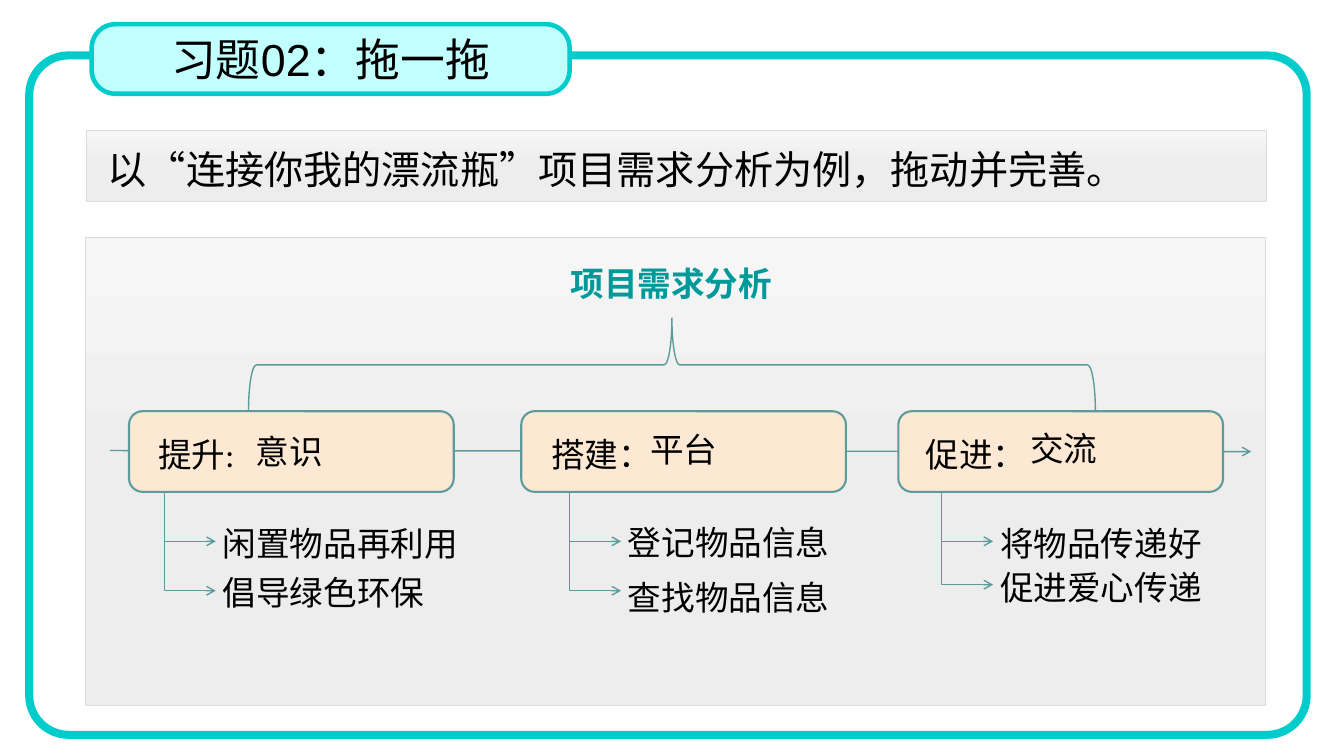
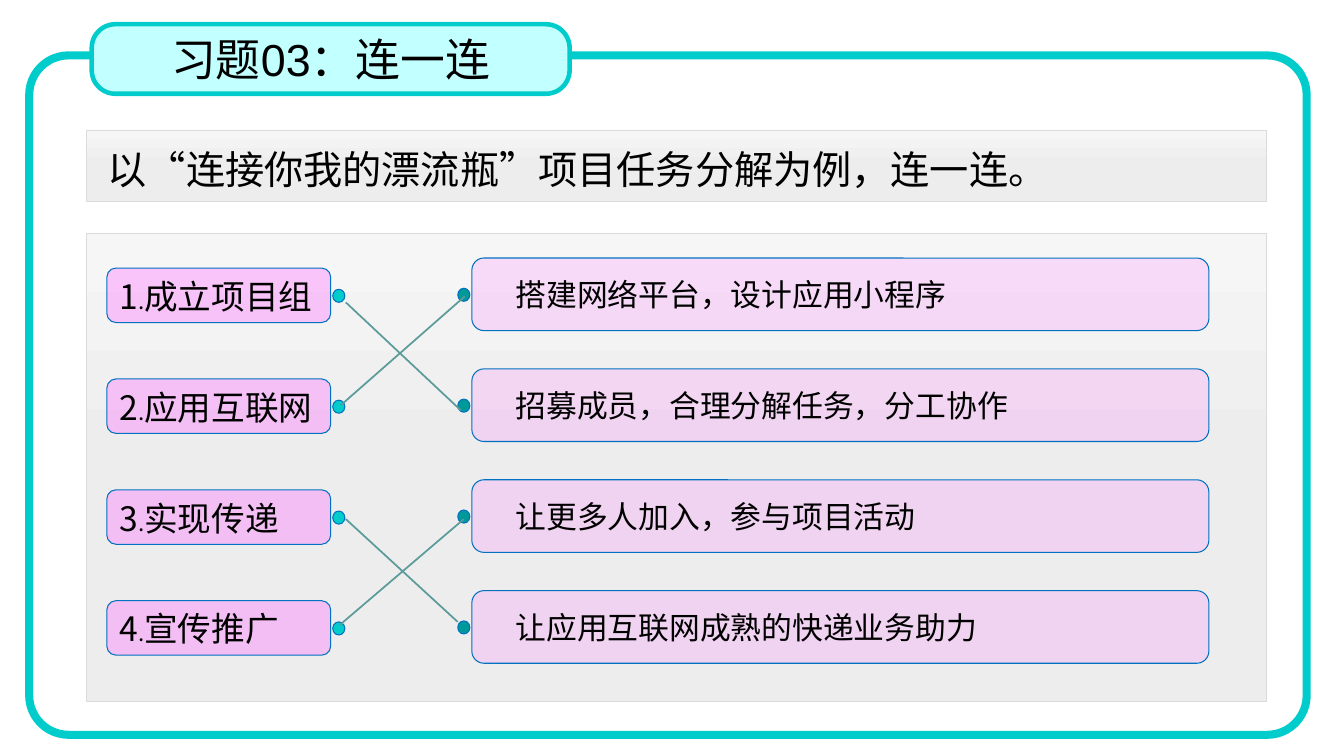
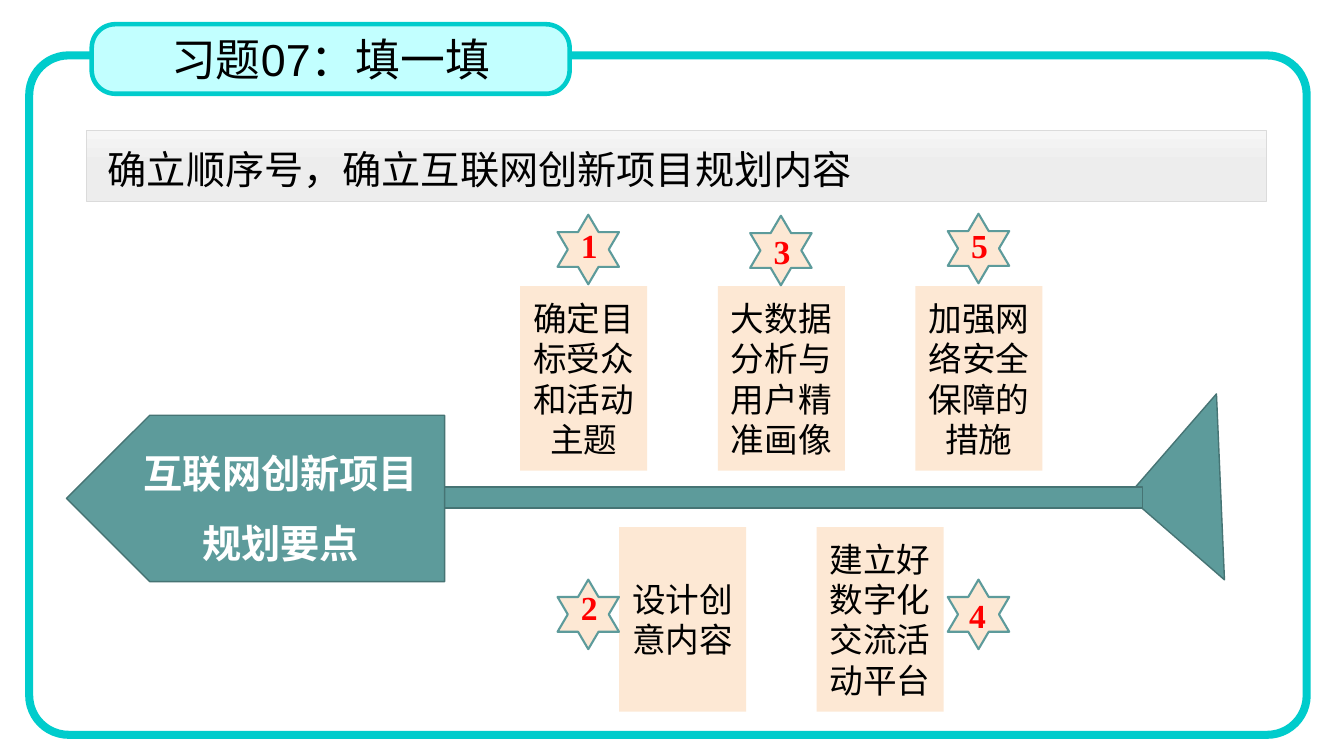
import copy

import pptx
import pptx.dml.color
import pptx.enum.shapes
import pptx.enum.text
import pptx.oxml
import pptx.oxml.ns
import pptx.util
from lxml import etree

Inches = pptx.util.Inches
Pt = pptx.util.Pt
RGBColor = pptx.dml.color.RGBColor
SHAPE = pptx.enum.shapes.MSO_SHAPE
LINK = pptx.enum.shapes.MSO_CONNECTOR
ALIGN = pptx.enum.text.PP_ALIGN
ANCHOR = pptx.enum.text.MSO_ANCHOR
qn = pptx.oxml.ns.qn

BLACK = RGBColor(0, 0, 0)
WHITE = RGBColor(0xFF, 0xFF, 0xFF)
RED = RGBColor(0xFF, 0, 0)
CYAN = RGBColor(0, 0xCC, 0xCC)
PALE_CYAN = RGBColor(0xC2, 0xFF, 0xFF)
TEAL = RGBColor(0x5D, 0x9B, 0x9B)
DARK_TEAL = RGBColor(0x46, 0x74, 0x74)
HEADING = RGBColor(0, 0x99, 0x99)
PEACH = RGBColor(0xFD, 0xE8, 0xD4)
PINK = RGBColor(0xFF, 0x66, 0xFF)
BLUE = RGBColor(0, 0x70, 0xC0)
PANEL_EDGE = RGBColor(0xDB, 0xDB, 0xDB)
PANEL_STOPS = [
    (0, RGBColor(0xF6, 0xF6, 0xF6)),
    (0.5, RGBColor(0xED, 0xED, 0xED)),
    (1, RGBColor(0xEB, 0xEB, 0xEB)),
]
CJK = "Noto Sans CJK SC"


def add_shape(slide, kind, box, fill=None, line=None, width=1, adj=(), alpha=None):
    sp = slide.shapes.add_shape(kind, *map(Inches, box))
    sp.shadow.inherit = False
    for i, value in enumerate(adj):
        sp.adjustments[i] = value
    if fill is None:
        sp.fill.background()
    else:
        sp.fill.solid()
        sp.fill.fore_color.rgb = fill
    if alpha is not None:
        color = sp._element.spPr.find(qn("a:solidFill"))[0]
        etree.SubElement(color, qn("a:alpha")).set("val", str(alpha * 1000))
    if line is None:
        sp.line.fill.background()
    else:
        sp.line.color.rgb = line
        sp.line.width = Pt(width)
    return sp


def add_run(p, text, size=24, font=CJK, color=BLACK, bold=False):
    r = p.add_run()
    r.text = text
    r.font.size = Pt(size)
    r.font.name = font
    r.font.bold = bold
    r.font.color.rgb = color
    ea = etree.Element(qn("a:ea"))
    ea.set("typeface", CJK)
    r.font._element.find(qn("a:latin")).addnext(ea)


def write(sp, text, align=ALIGN.LEFT, anchor=ANCHOR.MIDDLE, spacing=None, wrap=True, **font):
    tf = sp.text_frame
    tf.word_wrap = wrap
    tf.vertical_anchor = anchor
    for i, line in enumerate(text.split("\n")):
        p = tf.add_paragraph() if i else tf.paragraphs[0]
        p.alignment = align
        if spacing:
            p.line_spacing = spacing
        add_run(p, line, **font)


def add_text(slide, box, text, spacing=1.5, **fmt):
    sp = slide.shapes.add_textbox(*map(Inches, box))
    write(sp, text, anchor=ANCHOR.TOP, spacing=spacing, **fmt)


def add_line(slide, x1, y1, x2, y2, width=1, arrow=False, kind=LINK.STRAIGHT):
    cx = slide.shapes.add_connector(kind, *map(Inches, (x1, y1, x2, y2)))
    cx.line.color.rgb = TEAL
    cx.line.width = Pt(width)
    if arrow:
        tail = etree.SubElement(cx.line._get_or_add_ln(), qn("a:tailEnd"))
        tail.set("type", "arrow")
    etree.SubElement(cx._element.spPr, qn("a:effectLst"))
    return cx


def add_down_right_arrow(slide, x, y, across=0.51, down=0.49):
    mid_x, mid_y = x + across / 2, y + down / 2
    cx = add_line(slide, mid_x - down / 2, mid_y - across / 2,
                  mid_x + down / 2, mid_y + across / 2, arrow=True, kind=LINK.ELBOW)
    spPr = cx._element.spPr
    spPr.find(qn("a:xfrm")).set("rot", "5400000")
    spPr.find(qn("a:xfrm")).set("flipV", "1")
    spPr.find(qn("a:prstGeom")).set("prst", "bentConnector2")


def add_panel(slide, box):
    sp = add_shape(slide, SHAPE.RECTANGLE, box, line=PANEL_EDGE, width=0.5)
    sp.fill.gradient()
    stops = sp._element.spPr.find(qn("a:gradFill")).find(qn("a:gsLst"))
    stops.insert(1, copy.deepcopy(stops[0]))
    for stop, (position, color) in zip(sp.fill.gradient_stops, PANEL_STOPS):
        stop.position = position
        stop.color.rgb = color
    sp.fill.gradient_angle = 270


def add_exercise(prs, title, task, panel=None):
    slide = prs.slides.add_slide(prs.slide_layouts[6])
    if panel:
        add_panel(slide, panel)
    add_panel(slide, (0.86, 1.29, 11.7, 0.71))
    add_shape(slide, SHAPE.ROUNDED_RECTANGLE, (0.29, 0.55, 12.67, 6.74),
              line=CYAN, width=5.75, adj=[0.058])
    sp = add_shape(slide, SHAPE.ROUNDED_RECTANGLE, (0.91, 0.24, 4.74, 0.69),
                   fill=PALE_CYAN, line=CYAN, width=3.25, adj=[0.341])
    write(sp, title, align=ALIGN.CENTER, size=32, font="Arial")
    add_text(slide, (0.97, 1.16, 11.59, 0.81), task, size=28)
    return slide


def add_need(slide, x, y, verb, verb_at, noun, noun_at, trunk, branches):
    add_shape(slide, SHAPE.FLOWCHART_ALTERNATE_PROCESS, (x, y, 3.22, 0.8),
              fill=PEACH, line=TEAL, width=1.5)
    add_text(slide, (x + verb_at, y - 0.02, 2.11, 0.71), verb, font="Calibri")
    dx, dy = noun_at
    write(add_shape(slide, SHAPE.RECTANGLE, (x + dx, y + dy, 1.26, 0.53), fill=PEACH), noun)
    for text, arrow_dy, text_dy in branches:
        add_down_right_arrow(slide, x + trunk, y + arrow_dy)
        add_text(slide, (x + trunk + 0.48, y + text_dy, 2.83, 0.71), text)


def build_needs(prs):
    slide = add_exercise(prs, "习题02：拖一拖", "以“连接你我的漂流瓶”项目需求分析为例，拖动并完善。",
                         (0.85, 2.36, 11.7, 4.64))
    add_line(slide, 1.09, 4.47, 12.41, 4.48, arrow=True)
    add_text(slide, (5.56, 2.36, 3.17, 0.71), "项目需求分析", color=HEADING, bold=True)
    brace = add_shape(slide, SHAPE.RIGHT_BRACE, (6.2, -0.58, 0.93, 8.4),
                      line=TEAL, adj=[0.083, 0.5])
    brace.rotation = 270
    needs = [
        (1.28, "提升:", 0.19, "意识", (1.16, 0.13), 0.35,
         [("闲置物品再利用", 0.8, 0.86), ("倡导绿色环保", 1.29, 1.34)]),
        (5.17, "搭建：", 0.2, "平台", (1.18, 0.11), 0.48,
         [("登记物品信息", 0.8, 0.85), ("查找物品信息", 1.29, 1.39)]),
        (8.91, "促进：", 0.17, "交流", (1.21, 0.1), 0.43,
         [("将物品传递好", 0.8, 0.86), ("促进爱心传递", 1.23, 1.29)]),
    ]
    for x, *need in needs:
        add_need(slide, x, 4.08, *need)


def add_dot(slide, x, y, color):
    add_shape(slide, SHAPE.OVAL, (x, y, 0.12, 0.13), fill=color, line=BLUE, width=0.75)


def add_step(slide, x, y, number, text):
    sp = add_shape(slide, SHAPE.ROUNDED_RECTANGLE, (x, y, 2.22, 0.54),
                   fill=PINK, line=BLUE, width=0.75, alpha=34)
    write(sp, str(number), anchor=ANCHOR.TOP)
    p = sp.text_frame.paragraphs[0]
    add_run(p, ".", size=16)
    add_run(p, text)
    add_dot(slide, x + 2.24, y + 0.21, CYAN)


def add_answer(slide, x, y, text):
    sp = add_shape(slide, SHAPE.ROUNDED_RECTANGLE, (x, y, 7.31, 0.72),
                   fill=PINK, line=BLUE, width=0.75, alpha=19)
    write(sp, text, size=22)
    sp.text_frame.margin_left = Inches(0.4)
    add_dot(slide, x - 0.14, y + 0.3, HEADING)


def build_matching(prs):
    slide = add_exercise(prs, "习题03：连一连", "以“连接你我的漂流瓶”项目任务分解为例，连一连。",
                         (0.86, 2.32, 11.7, 4.64))
    pairs = [
        ("成立项目组", "搭建网络平台，设计应用小程序"),
        ("应用互联网", "招募成员，合理分解任务，分工协作"),
        ("实现传递", "让更多人加入，参与项目活动"),
        ("宣传推广", "让应用互联网成熟的快递业务助力"),
    ]
    for i, (step, answer) in enumerate(pairs):
        add_step(slide, 1.06, 2.66 + 1.1 * i, i + 1, step)
        add_answer(slide, 4.68, 2.56 + 1.1 * i, answer)
    for ends in [(3.43, 3, 4.57, 4.07), (3.38, 4.02, 4.61, 2.94),
                 (3.43, 5.15, 4.54, 6.17), (3.37, 6.2, 4.6, 5.15)]:
        add_line(slide, *ends, width=1.25)


def add_fish(slide, x, y):
    tail = add_shape(slide, SHAPE.RIGHT_TRIANGLE, (x + 10.81, y + 0.04, 1.27, 1.34),
                     fill=TEAL, line=DARK_TEAL)
    tail.rotation = 41
    add_shape(slide, SHAPE.RECTANGLE, (x + 3.72, y + 0.71, 6.95, 0.21),
              fill=TEAL, line=DARK_TEAL)
    head = add_shape(slide, SHAPE.PENTAGON, (x, y, 3.75, 1.65), fill=TEAL, line=DARK_TEAL)
    head._element.spPr.find(qn("a:xfrm")).set("flipH", "1")
    add_text(slide, (x + 0.31, y + 0.05, 3.63, 1.51), "互联网创新项目\n规划要点",
             align=ALIGN.CENTER, size=28, color=WHITE, bold=True)


def add_card(slide, x, y, text):
    sp = add_shape(slide, SHAPE.RECTANGLE, (x, y, 1.26, 1.83), fill=PEACH)
    write(sp, text, align=ALIGN.CENTER)


def add_badge(slide, x, y, number, dx, dy):
    add_shape(slide, SHAPE.STAR_6_POINT, (x, y, 0.61, 0.69), fill=PEACH, line=TEAL, width=1.5)
    add_text(slide, (x + dx, y + dy, 0.37, 0.5), number, spacing=None, wrap=False,
             align=ALIGN.CENTER, font="Times New Roman", color=RED, bold=True)


def build_fishbone(prs):
    slide = add_exercise(prs, "习题07：填一填", "确立顺序号，确立互联网创新项目规划内容")
    add_fish(slide, 0.66, 4.12)
    rows = [
        (5.16, 2.84, ["确定目标受众和活动主题", "大数据分析与用户精准画像", "加强网络安全保障的措施"]),
        (6.14, 5.23, ["设计创意内容", "建立好 数字化交流活动平台"]),
    ]
    for x, y, texts in rows:
        for i, text in enumerate(texts):
            add_card(slide, x + 1.96 * i, y, text)
    for badge in [(5.53, 2.13, "1", 0.13, 0.05), (5.53, 5.75, "2", 0.13, 0.02),
                  (7.44, 2.14, "3", 0.13, 0.1), (9.4, 5.75, "4", 0.11, 0.1),
                  (9.4, 2.12, "5", 0.13, 0.06)]:
        add_badge(slide, *badge)


def main():
    prs = pptx.Presentation()
    prs.slide_width = Inches(13.33)
    prs.slide_height = Inches(7.5)
    build_needs(prs)
    build_matching(prs)
    build_fishbone(prs)
    prs.save("out.pptx")


if __name__ == "__main__":
    main()
